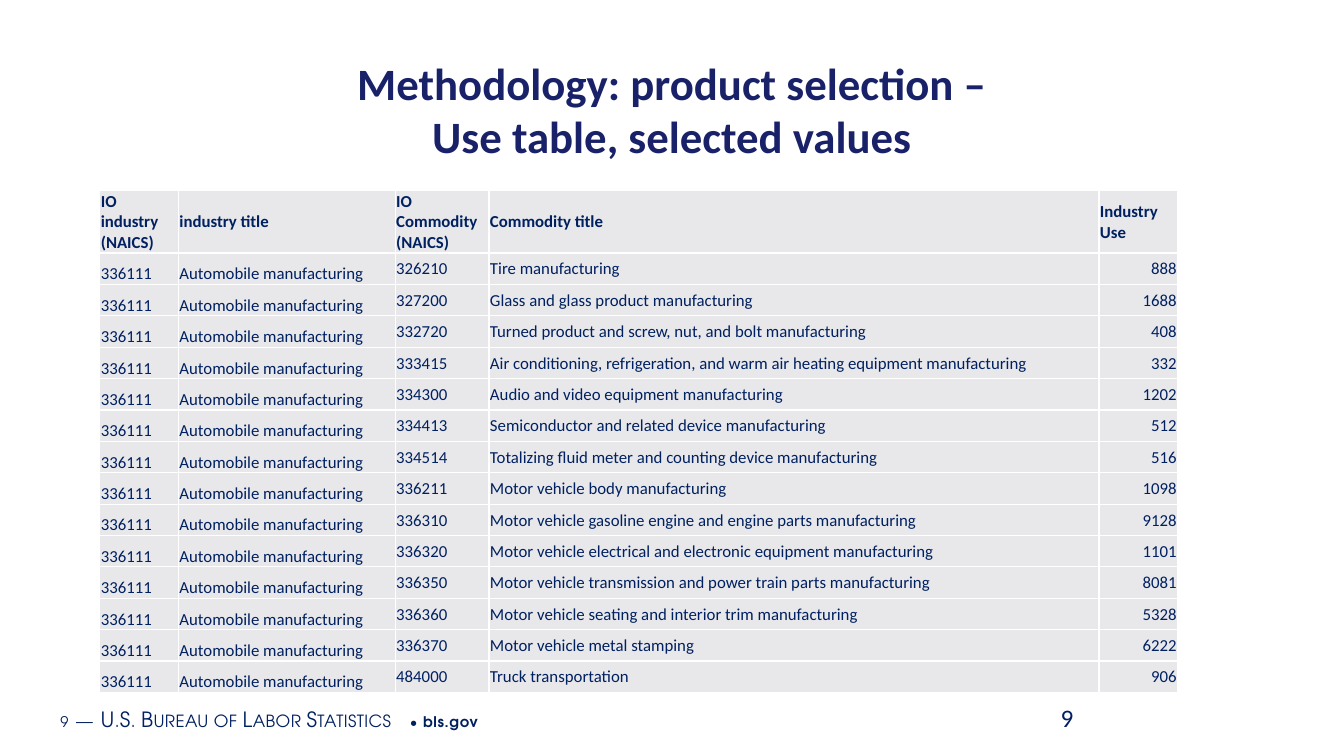
"""Build the slide on product selection with selected Use table values."""
from lxml.etree import SubElement
from pptx import Presentation
from pptx.dml.color import RGBColor
from pptx.enum.text import MSO_ANCHOR as Anchor, PP_ALIGN as Align
from pptx.oxml import parse_xml
from pptx.oxml.ns import nsdecls, qn
from pptx.util import Pt

PX = 9144
NAVY = RGBColor(0x00, 0x20, 0x60)
TITLE_BLUE = RGBColor(0x19, 0x21, 0x68)
CELL_GRAY = RGBColor(0xE8, 0xE8, 0xEB)
WHITE = RGBColor(0xFF, 0xFF, 0xFF)
BODY_FONT = "Calibri"
FOOTER_FONT = "TeX Gyre Adventor"

HEADINGS = ("IO industry (NAICS)", "industry title", "IO Commodity (NAICS)",
            "Commodity title", "Industry Use")
INDUSTRY = ("336111", "Automobile manufacturing")
COMMODITIES = (
    ("326210", "Tire manufacturing", 888),
    ("327200", "Glass and glass product manufacturing", 1688),
    ("332720", "Turned product and screw, nut, and bolt manufacturing", 408),
    ("333415", "Air conditioning, refrigeration, and warm air heating equipment manufacturing", 332),
    ("334300", "Audio and video equipment manufacturing", 1202),
    ("334413", "Semiconductor and related device manufacturing", 512),
    ("334514", "Totalizing fluid meter and counting device manufacturing", 516),
    ("336211", "Motor vehicle body manufacturing", 1098),
    ("336310", "Motor vehicle gasoline engine and engine parts manufacturing", 9128),
    ("336320", "Motor vehicle electrical and electronic equipment manufacturing", 1101),
    ("336350", "Motor vehicle transmission and power train parts manufacturing", 8081),
    ("336360", "Motor vehicle seating and interior trim manufacturing", 5328),
    ("336370", "Motor vehicle metal stamping", 6222),
    ("484000", "Truck transportation", 906),
)
COLUMN_WIDTHS = (78, 215, 93, 605, 78)
HEADER_HEIGHT = 62

FOOTER_RUNS = (
    ("9", 10.5, 50, False, False),
    (" ", 16, 50, False, False),
    ("—", 15, 30, True, False),
    (" ", 16, 50, False, False),
    ("U.S. Bureau of Labor Statistics", 15, 30, True, False),
    (" • ", 10.5, 50, False, False),
    ("bls.gov", 10.5, 50, False, True),
)


def style_font(font, size, color=NAVY, bold=False, name=BODY_FONT):
    """Set the size, colour, weight and typeface of a font."""
    font.name, font.size, font.bold = name, Pt(size), bold
    font.color.rgb = color


def add_frame(slide, box):
    """Add a wrapping text box and return its text frame."""
    frame = slide.shapes.add_textbox(*(length * PX for length in box)).text_frame
    frame.word_wrap = True
    return frame


def add_line(slide, box, text, size, color, bold=False, align=Align.LEFT):
    """Add one paragraph of evenly styled text in the box."""
    frame = add_frame(slide, box)
    frame.text = text
    paragraph = frame.paragraphs[0]
    paragraph.alignment = align
    for run in paragraph.runs:
        style_font(run.font, size, color, bold)


def add_footer(slide, box):
    """Add the agency line with its small caps and letter spacing."""
    frame = add_frame(slide, box)
    frame.vertical_anchor = Anchor.MIDDLE
    frame.margin_left = frame.margin_right = 7 * PX
    frame.margin_top = frame.margin_bottom = 4 * PX
    for text, size, spacing, small_caps, bold in FOOTER_RUNS:
        run = frame.paragraphs[0].add_run()
        run.text = text
        style_font(run.font, size, NAVY, bold, FOOTER_FONT)
        properties = run._r.get_or_add_rPr()
        properties.set("spc", str(spacing))
        if small_caps:
            properties.set("cap", "small")


def add_borders(cell):
    """Draw a thin white line on each side of the cell."""
    properties = cell._tc.get_or_add_tcPr()
    for index, side in enumerate("LRTB"):
        border = parse_xml(f'<a:ln{side} {nsdecls("a")} w="{Pt(1)}"/>')
        fill = SubElement(border, qn("a:solidFill"))
        SubElement(fill, qn("a:srgbClr")).set("val", str(WHITE))
        properties.insert(index, border)


def fill_cell(cell, value, is_header, anchor):
    """Write one value into a cell and style the cell."""
    cell.margin_left = cell.margin_right = cell.margin_top = PX
    cell.margin_bottom = 0
    cell.vertical_anchor = anchor
    cell.fill.solid()
    cell.fill.fore_color.rgb = CELL_GRAY
    add_borders(cell)
    cell.text_frame.text = str(value)
    paragraph = cell.text_frame.paragraphs[0]
    paragraph.alignment = Align.RIGHT if isinstance(value, int) else Align.LEFT
    style_font(paragraph.runs[0].font, 12, bold=is_header)


def add_use_table(slide, box):
    """Add the Use table, with equal rows below a taller header."""
    records = [HEADINGS] + [INDUSTRY + commodity for commodity in COMMODITIES]
    table = slide.shapes.add_table(len(records), len(HEADINGS),
                                   *(length * PX for length in box)).table
    table.first_row = table.horz_banding = False
    for column, width in zip(table.columns, COLUMN_WIDTHS):
        column.width = width * PX
    body_height = (box[3] - HEADER_HEIGHT) * PX // len(COMMODITIES)
    for row_index, record in enumerate(records):
        is_header = row_index == 0
        table.rows[row_index].height = HEADER_HEIGHT * PX if is_header else body_height
        for column_index, value in enumerate(record):
            is_industry = not is_header and column_index < len(INDUSTRY)
            fill_cell(table.cell(row_index, column_index), value, is_header,
                      Anchor.BOTTOM if is_industry else Anchor.MIDDLE)


def main():
    """Build and save the presentation."""
    deck = Presentation()
    deck.slide_width, deck.slide_height = 1333 * PX, 750 * PX
    slide = deck.slides.add_slide(deck.slide_layouts[6])
    add_footer(slide, (53, 693, 847, 40))
    add_line(slide, (54, 50, 1225, 88),
             "Methodology: product selection –\vUse table, selected values",
             32, TITLE_BLUE, True, Align.CENTER)
    add_line(slide, (1042, 692, 75, 40), "9", 18, NAVY)
    add_use_table(slide, (99, 189, sum(COLUMN_WIDTHS), 498))
    deck.save("out.pptx")


if __name__ == "__main__":
    main()
